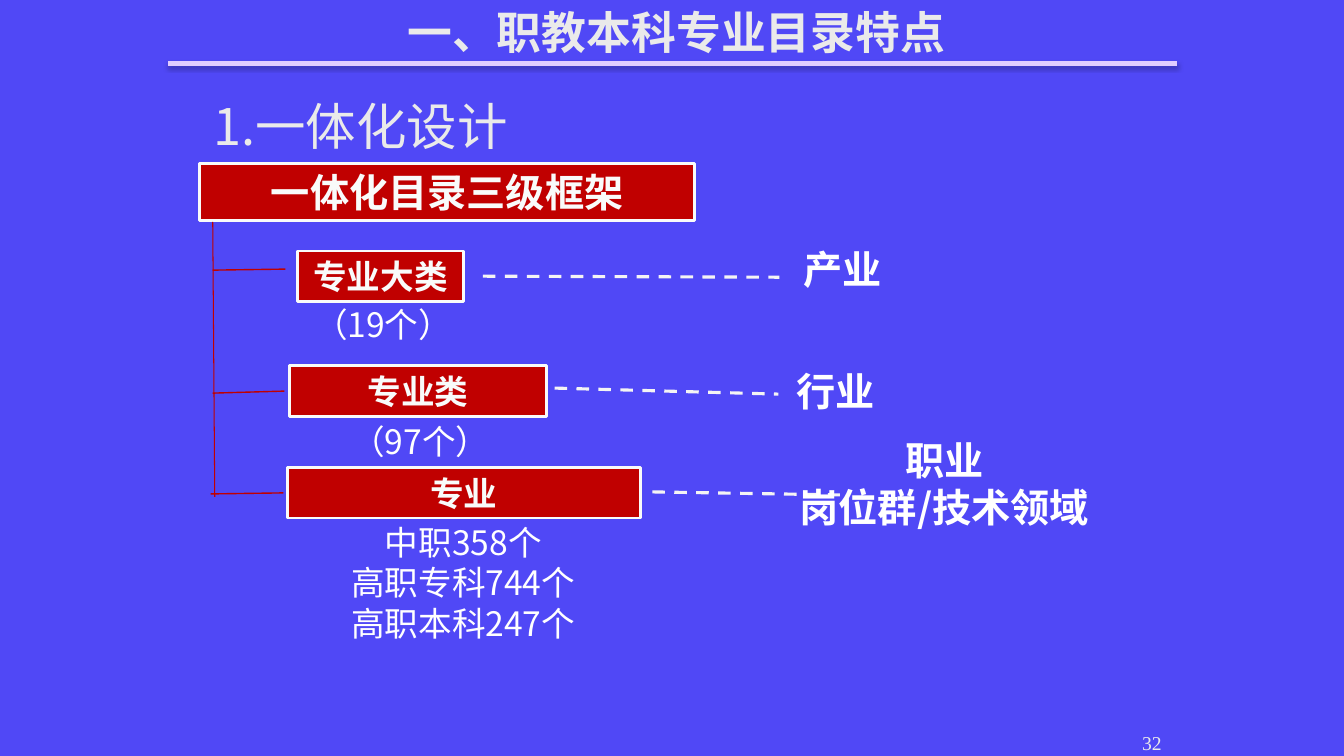
from dataclasses import dataclass
from lxml import etree
from pptx import Presentation
from pptx.dml.color import RGBColor
from pptx.enum.dml import MSO_LINE
from pptx.enum.shapes import MSO_CONNECTOR, MSO_SHAPE
from pptx.enum.text import MSO_ANCHOR, MSO_AUTO_SIZE, PP_ALIGN
from pptx.oxml.ns import qn
from pptx.util import Inches, Pt


@dataclass(frozen=True)
class Theme:
    font: str = "Noto Sans CJK SC"
    number_font: str = "Times New Roman"
    background: str = "5048F6"
    heading: str = "EAEAEA"
    rule: str = "E0CCFF"
    shadow: str = "000000"
    box: str = "C00000"
    box_text: str = "F9FBFA"
    label: str = "FFFFFF"
    dash: str = "F4F4F4"
    section_size: int = 36
    title_size: int = 32
    large: int = 28
    medium: int = 24
    small: int = 14


theme = Theme()


def write(s, lines, size, color, bold=False, align=PP_ALIGN.CENTER, font=theme.font):
    """Fill a shape with one paragraph per line and return its text frame."""
    tf = s.text_frame
    tf.word_wrap = True
    for i, line in enumerate(lines):
        p = tf.add_paragraph() if i else tf.paragraphs[0]
        p.alignment = align
        r = p.add_run()
        r.text = line
        r.font.name = font
        r.font.size = Pt(size)
        r.font.bold = bold
        r.font.color.rgb = RGBColor.from_string(color)
        etree.SubElement(r.font._element, qn("a:ea"), typeface=font)
    return tf


def add_line(x1, y1, x2, y2, color, width):
    """Add a shadowless line; return it with its empty effect list."""
    s = slide.shapes.add_connector(
        MSO_CONNECTOR.STRAIGHT, Inches(x1), Inches(y1), Inches(x2), Inches(y2))
    s.line.color.rgb = RGBColor.from_string(color)
    s.line.width = Pt(width)
    return s, etree.SubElement(s._element.spPr, qn("a:effectLst"))


prs = Presentation()
prs.slide_width, prs.slide_height = Inches(13.33), Inches(7.5)
slide = prs.slides.add_slide(prs.slide_layouts[6])
slide.background.fill.solid()
slide.background.fill.fore_color.rgb = RGBColor.from_string(theme.background)

# Title, rule and slide number
title = slide.shapes.add_textbox(Inches(1.71), Inches(-0.19), Inches(10), Inches(1))
tf = write(title, ["一、职教本科专业目录特点"], theme.title_size, theme.heading, bold=True)
tf.vertical_anchor = MSO_ANCHOR.MIDDLE

rule, effects = add_line(1.67, 0.63, 11.67, 0.63, theme.rule, 3)
shadow = etree.SubElement(
    effects, qn("a:outerShdw"), blurRad=str(Pt(3.1)), dist=str(Pt(1.8)),
    dir="5400000", rotWithShape="0")
shadow_color = etree.SubElement(shadow, qn("a:srgbClr"), val=theme.shadow)
etree.SubElement(shadow_color, qn("a:alpha"), val="35000")

number = slide.shapes.add_textbox(Inches(9.54), Inches(7.08), Inches(2.08), Inches(0.5))
tf = write(number, ["32"], theme.small, theme.heading,
           align=PP_ALIGN.RIGHT, font=theme.number_font)
tf.vertical_anchor = MSO_ANCHOR.BOTTOM
tf.margin_bottom = Inches(0.09)

# Section heading with a hanging indent
section = slide.shapes.add_textbox(Inches(2.02), Inches(0.77), Inches(9.47), Inches(4.29))
tf = write(section, ["1.一体化设计"], theme.section_size, theme.heading, align=PP_ALIGN.LEFT)
p = tf.paragraphs[0]
p.line_spacing = 1.2
p.space_before = Pt(12)
pPr = p._p.get_or_add_pPr()
pPr.set("marL", str(Inches(0.67)))
pPr.set("indent", str(Inches(-0.67)))

# Framework boxes
boxes = [
    ("一体化目录三级框架", 1.98, 1.62, 4.91, 0.57, theme.large),
    ("专业大类", 2.95, 2.49, 1.65, 0.5, theme.medium),
    ("专业类", 2.87, 3.63, 2.55, 0.5, theme.medium),
    ("专业", 2.85, 4.64, 3.5, 0.5, theme.medium),
]
for text, x, y, w, h, size in boxes:
    s = slide.shapes.add_shape(
        MSO_SHAPE.RECTANGLE, Inches(x), Inches(y), Inches(w), Inches(h))
    s.shadow.inherit = False
    s.fill.solid()
    s.fill.fore_color.rgb = RGBColor.from_string(theme.box)
    s.line.color.rgb = RGBColor.from_string(theme.box_text)
    s.line.width = Pt(2)
    tf = write(s, [text], size, theme.box_text, bold=True)
    tf.auto_size = MSO_AUTO_SIZE.SHAPE_TO_FIT_TEXT

# Trunk and branches of the tree
add_line(2.11, 2.2, 2.13, 4.93, theme.box, 0.75)
for x1, y1, x2, y2 in [(2.11, 2.68, 2.83, 2.67),
                       (2.11, 3.9, 2.82, 3.88),
                       (2.09, 4.9, 2.81, 4.89)]:
    add_line(x1, y1, x2, y2, theme.box, 1)

# Dashed links from each level to its counterpart
for x1, y1, x2, y2 in [(4.79, 2.74, 7.73, 2.75),
                       (5.5, 3.85, 7.72, 3.91),
                       (6.47, 4.88, 8.33, 4.91)]:
    link, _ = add_line(x1, y1, x2, y2, theme.dash, 2.25)
    link.line.dash_style = MSO_LINE.DASH

# Counterparts (bold) and counts (regular)
labels = [
    (["产业"], 7.18, 2.38, 2.36, 0.74, theme.large, True),
    (["行业"], 7.11, 3.59, 2.36, 0.74, theme.large, True),
    (["职业", "岗位群/技术领域"], 7.1, 4.28, 4.53, 0.74, theme.large, True),
    (["（19个）"], 2.62, 2.97, 2.36, 0.74, theme.medium, False),
    (["（97个）"], 2.92, 4.13, 2.5, 0.74, theme.medium, False),
    (["中职358个", "高职专科744个", "高职本科247个"],
     2.83, 5.13, 3.53, 0.69, theme.medium, False),
]
for lines, x, y, w, h, size, bold in labels:
    s = slide.shapes.add_textbox(Inches(x), Inches(y), Inches(w), Inches(h))
    write(s, lines, size, theme.label, bold)

prs.save("out.pptx")
